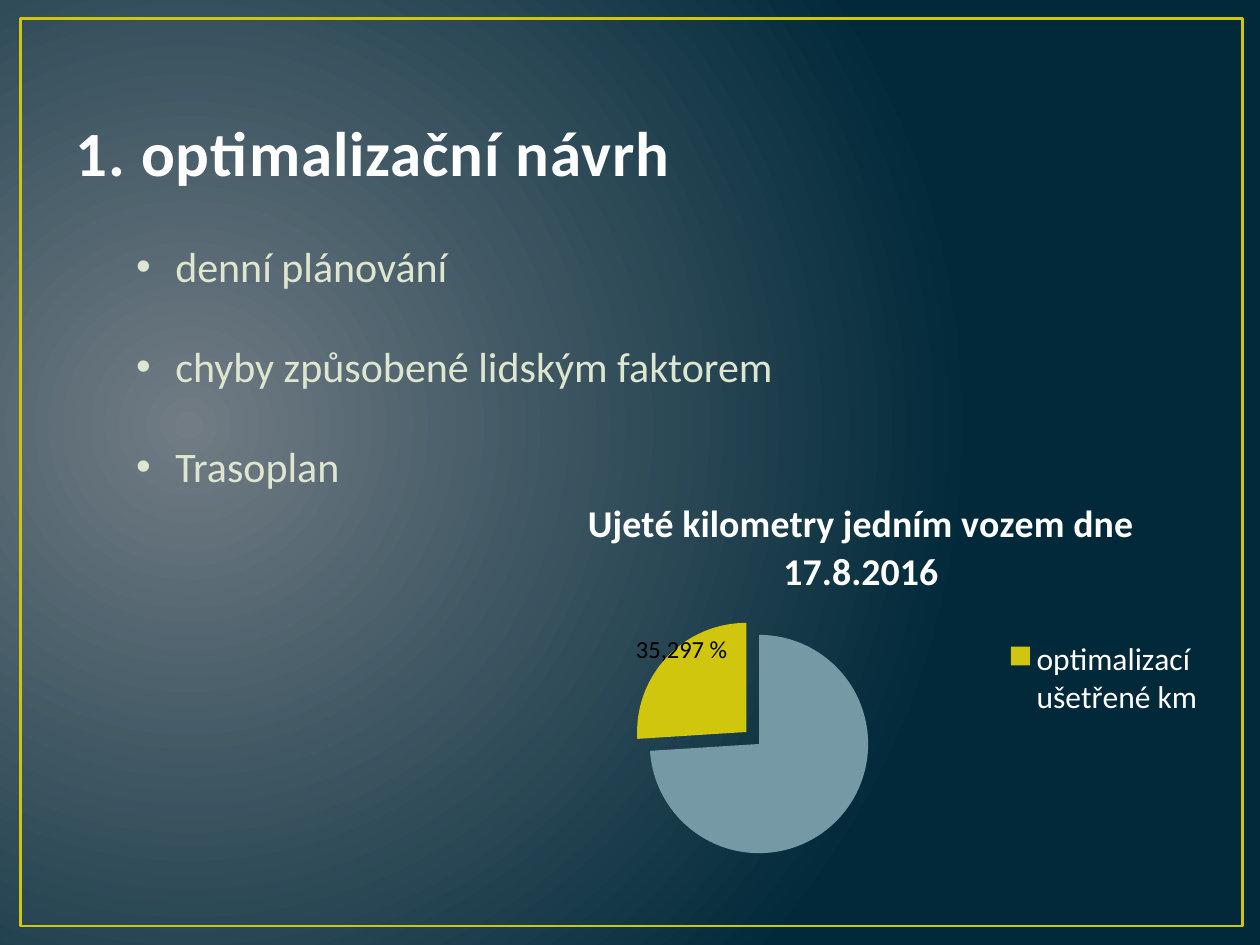
from pptx import Presentation
from pptx.chart.data import CategoryChartData as Data
from pptx.dml.color import RGBColor as Rgb
from pptx.enum.chart import XL_CHART_TYPE as Kind, XL_LEGEND_POSITION as Side
from pptx.enum.shapes import MSO_SHAPE as Form
from pptx.enum.text import MSO_ANCHOR as Anchor, MSO_AUTO_SIZE as Fit
from pptx.oxml import parse_xml
from pptx.oxml.ns import nsdecls, qn
from pptx.util import Cm, Pt

HUES = {"hub": "717C84", "night": "01293A", "gold": "CFC60D", "title": "FEFEFE",
        "edge": "384F55", "list": "DFE6D0", "white": "FFFFFF", "black": "000000",
        "steel": "759AA5"}
HEAD = "Ujeté kilometry jedním vozem dne 17.8.2016"


def hue(name):
    return Rgb.from_string(HUES[name])


def style(font, size, tint, bold=False):
    for key, val in {"name": "Calibri", "size": Pt(size), "bold": bold}.items():
        setattr(font, key, val)
    font.color.rgb = hue(tint)


def move(shape, box):
    for key, val in zip(("left", "top", "width", "height"), box):
        setattr(shape, key, Cm(val))


def node(tag, attrs="", inner=""):
    return parse_xml(f"<{tag} {nsdecls('a', 'c')} {attrs}>{inner}</{tag}>")


def add_back(slide):
    """Radial background glow."""
    fill = slide.background.fill
    fill.gradient()
    old = slide.element.find(".//" + qn("a:gradFill"))
    stops = "".join(f'<a:gs pos="{pos}"><a:srgbClr val="{HUES[name]}"/></a:gs>'
                    for pos, name in ((0, "hub"), (100000, "night")))
    glow = ('<a:path path="circle">'
            '<a:fillToRect l="15000" t="50000" r="85000" b="60000"/></a:path>')
    new = node("a:gradFill", 'rotWithShape="1"', f"<a:gsLst>{stops}</a:gsLst>{glow}")
    old.getparent().replace(old, new)


def add_frame(slide, box):
    """Thin gold frame behind everything."""
    frame = slide.shapes.add_shape(Form.RECTANGLE, *map(Cm, box))
    frame.shadow.inherit = False
    frame.fill.background()
    frame.line.color.rgb = hue("gold")
    frame.line.width = Pt(1.5)
    slide.shapes.element.insert(2, frame.element) if hasattr(
        slide.shapes, "element") else frame.element.getparent().insert(2, frame.element)


def add_title(slide, box):
    title = slide.shapes.title
    move(title, box)
    text = title.text_frame
    text.text = "1. optimalizační návrh"
    text.vertical_anchor = Anchor.BOTTOM
    par = text.paragraphs[0]
    par.alignment = 1
    run = par.runs[0]
    style(run.font, 36, "title", True)
    look = run.font._element
    look.set("spc", "50")
    look.insert(0, node("a:ln", f'w="{Pt(1.05)}"',
                        f'<a:solidFill><a:srgbClr val="{HUES["edge"]}"/></a:solidFill>'))


def add_list(slide, box, items):
    body = slide.placeholders[1]
    move(body, box)
    text = body.text_frame
    text.auto_size = Fit.NONE
    text.text = "\n".join(items)
    for num, par in enumerate(text.paragraphs):
        props = par._p.get_or_add_pPr()
        props.set("marL", str(Cm(0.79)))
        props.set("indent", str(-Cm(0.79)))
        props.append(node("a:buChar", 'char="•"'))
        par.space_before = Pt(28.5 if num else 0)
        style(par.runs[0].font, 24, "list")


def lay(part, spot, box, inner=False):
    """Fixed place for a chart part, in fractions of the chart."""
    for old in part.findall(qn("c:layout")):
        part.remove(old)
    rows = [("layoutTarget", "inner")] if inner else []
    rows += [("xMode", "edge"), ("yMode", "edge"), *zip("xywh", box)]
    tags = "".join(f'<c:{key} val="{val}"/>' for key, val in rows)
    part.insert(spot, node("c:layout", "", f"<c:manualLayout>{tags}</c:manualLayout>"))


def add_pie(slide, box):
    left, top, wide, high = box
    data = Data()
    data.categories = ["", "optimalizací ušetřené km"]
    data.add_series(HEAD, (74, 26))
    chart = slide.shapes.add_chart(Kind.PIE, *map(Cm, box), data).chart
    style(chart.font, 18, "white")

    # Heading
    chart.has_title = True
    chart.chart_title.include_in_layout = False
    head = chart.chart_title.text_frame
    head.text = HEAD
    style(head.paragraphs[0].runs[0].font, 21.6, "white", True)

    # Slices, with the saved part pulled out
    plot = chart.plots[0]
    plot.vary_by_categories = True
    for num, tint in enumerate(("steel", "gold")):
        fill = plot.series[0].points[num].format.fill
        fill.solid()
        fill.fore_color.rgb = hue(tint)
    root = chart.element
    saved = root.findall(".//" + qn("c:dPt"))[1]
    saved.find(qn("c:spPr")).addprevious(node("c:explosion", 'val="16"'))
    lay(root.find(".//" + qn("c:plotArea")), 0, (0.2, 0.41, 0.31, 0.57), True)

    # Legend shows the saved part only
    chart.has_legend = True
    chart.legend.position = Side.RIGHT
    chart.legend.include_in_layout = False
    style(chart.legend.font, 18, "white")
    key = root.find(".//" + qn("c:legend"))
    lay(key, 1, (0.7, 0.4, 0.29, 0.25))
    key.insert(1, node("c:legendEntry", "", '<c:idx val="0"/><c:delete val="1"/>'))

    # Share label over the slice
    note = slide.shapes.add_textbox(Cm(left + 2.31), Cm(top + 3.07), Cm(3.4), Cm(0.86))
    note.text_frame.word_wrap = True
    note.text_frame.text = "35,297 %"
    style(note.text_frame.paragraphs[0].runs[0].font, 14, "black")


def main():
    deck = Presentation()
    deck.slide_width, deck.slide_height = Cm(25.4), Cm(19.05)
    slide = deck.slides.add_slide(deck.slide_layouts[1])
    add_back(slide)
    add_frame(slide, (0.41, 0.38, 24.64, 18.29))
    add_title(slide, (1.27, 0.76, 22.86, 3.18))
    add_list(slide, (2.49, 4.72, 16.21, 6.15),
             ("denní plánování", "chyby způsobené lidským faktorem", "Trasoplan"))
    add_pie(slide, (10.26, 9.58, 14.2, 7.8))
    deck.save("out.pptx")


if __name__ == "__main__":
    main()
